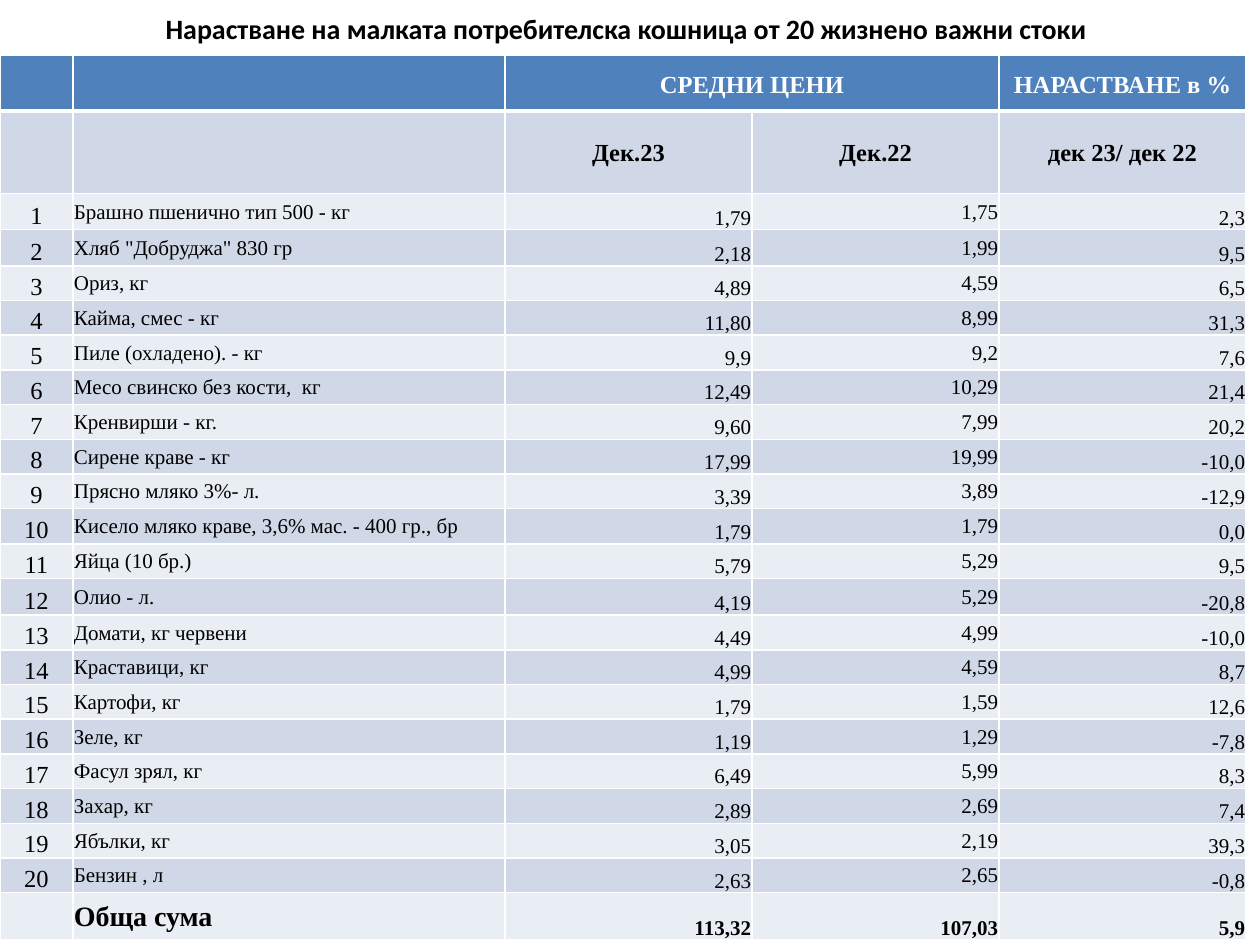
from lxml.etree import SubElement
from pptx import Presentation
from pptx.dml.color import RGBColor
from pptx.enum.text import MSO_ANCHOR, PP_ALIGN
from pptx.oxml.ns import qn
from pptx.util import Cm, Pt

SERIF = "Times New Roman"
HEADER, BAND_DARK, BAND_LIGHT = "4F81BD", "D0D8E8", "E9EDF4"
LEFT, CENTER, RIGHT = PP_ALIGN.LEFT, PP_ALIGN.CENTER, PP_ALIGN.RIGHT
MIDDLE, BOTTOM = MSO_ANCHOR.MIDDLE, MSO_ANCHOR.BOTTOM

TITLE = "Нарастване на малката потребителска кошница от 20 жизнено важни стоки"
HEADINGS = ["", "", "СРЕДНИ ЦЕНИ", "", "НАРАСТВАНЕ в %"]
PERIODS = ["", "", "Дек.23", "Дек.22", "дек 23/ дек 22"]
GOODS = [
    ("Брашно пшенично тип 500 - кг", "1,79", "1,75", "2,3"),
    ('Хляб "Добруджа" 830 гр', "2,18", "1,99", "9,5"),
    ("Ориз, кг", "4,89", "4,59", "6,5"),
    ("Кайма, смес - кг", "11,80", "8,99", "31,3"),
    ("Пиле (охладено). - кг", "9,9", "9,2", "7,6"),
    ("Месо свинско без кости,  кг", "12,49", "10,29", "21,4"),
    ("Кренвирши - кг.", "9,60", "7,99", "20,2"),
    ("Сирене краве - кг", "17,99", "19,99", "-10,0"),
    ("Прясно мляко 3%- л.", "3,39", "3,89", "-12,9"),
    ("Кисело мляко краве, 3,6% мас. - 400 гр., бр", "1,79", "1,79", "0,0"),
    ("Яйца (10 бр.)", "5,79", "5,29", "9,5"),
    ("Олио - л.", "4,19", "5,29", "-20,8"),
    ("Домати, кг червени", "4,49", "4,99", "-10,0"),
    ("Краставици, кг", "4,99", "4,59", "8,7"),
    ("Картофи, кг", "1,79", "1,59", "12,6"),
    ("Зеле, кг", "1,19", "1,29", "-7,8"),
    ("Фасул зрял, кг", "6,49", "5,99", "8,3"),
    ("Захар, кг", "2,89", "2,69", "7,4"),
    ("Ябълки, кг", "3,05", "2,19", "39,3"),
    ("Бензин , л", "2,63", "2,65", "-0,8"),
]
TOTAL = ["", "Oбща сума", "113,32", "107,03", "5,9"]

COL_WIDTHS = [1.47, 8.71, 4.98, 4.98, 4.98]
HEADING_H, PERIOD_H, GOODS_H, TOTAL_H = 1.12, 1.66, 0.7, 0.96
TALLER_GOODS = {1: 0.73, 2: 0.73, 10: 0.71, 12: 0.74}

# Alignment and anchor of each column in the goods rows
GOODS_FORMAT = [(CENTER, BOTTOM), (LEFT, MIDDLE), (RIGHT, BOTTOM),
                (RIGHT, MIDDLE), (RIGHT, BOTTOM)]


def rgb(value):
    return RGBColor.from_string(value)


def write(tf, text, font=SERIF, size=12, bold=False, color="000000",
          align=LEFT, spacing=None):
    p = tf.paragraphs[0]
    p.alignment = align
    if spacing:
        p.line_spacing = spacing
    r = p.add_run()
    r.text = text
    r.font.name, r.font.size, r.font.bold = font, Pt(size), bold
    r.font.color.rgb = rgb(color)


def set_borders(cell, top=1, bottom=1, color="FFFFFF"):
    tc_pr = cell._tc.get_or_add_tcPr()
    for i, (side, width) in enumerate(
            [("L", 1), ("R", 1), ("T", top), ("B", bottom)]):
        ln = SubElement(tc_pr, qn(f"a:ln{side}"), w=str(Pt(width)))
        fill = SubElement(ln, qn("a:solidFill"))
        SubElement(fill, qn("a:srgbClr"), val=color)
        tc_pr.insert(i, ln)


def format_cell(cell, text, fill, anchor=MIDDLE, wide=False,
                top=1, bottom=1, **text_format):
    cell.fill.solid()
    cell.fill.fore_color.rgb = rgb(fill)
    cell.vertical_anchor = anchor
    cell.margin_left = cell.margin_right = Cm(0.13 if wide else 0.02)
    cell.margin_top = Cm(0 if wide else 0.02)
    cell.margin_bottom = 0
    set_borders(cell, top, bottom)
    if text:
        write(cell.text_frame, text, **text_format)


def add_title(slide, x, y, w, h):
    s = slide.shapes.add_textbox(Cm(x), Cm(y), Cm(w), Cm(h))
    tf = s.text_frame
    tf.word_wrap = True
    tf.vertical_anchor = MIDDLE
    write(tf, TITLE, font="Calibri", size=16, bold=True, align=CENTER)


def add_price_table(slide, x, y):
    heights = [HEADING_H, PERIOD_H]
    heights += [TALLER_GOODS.get(n, GOODS_H) for n in range(1, len(GOODS) + 1)]
    heights.append(TOTAL_H)
    table = slide.shapes.add_table(
        len(heights), len(COL_WIDTHS), Cm(x), Cm(y),
        Cm(sum(COL_WIDTHS)), Cm(sum(heights))).table
    for column, width in zip(table.columns, COL_WIDTHS):
        column.width = Cm(width)
    for row, height in zip(table.rows, heights):
        row.height = Cm(height)

    # Two heading rows
    for col, text in enumerate(HEADINGS):
        format_cell(table.cell(0, col), text, HEADER, wide=True, bottom=3,
                    size=14, bold=True, color="FFFFFF", align=CENTER,
                    spacing=1.15)
    table.cell(0, 2).merge(table.cell(0, 3))
    for col, text in enumerate(PERIODS):
        format_cell(table.cell(1, col), text, BAND_DARK, top=3,
                    size=14, bold=True, align=CENTER)

    # Numbered goods in alternating bands
    for n, goods in enumerate(GOODS, 1):
        band = BAND_LIGHT if n % 2 else BAND_DARK
        for col, text in enumerate([str(n), *goods]):
            align, anchor = GOODS_FORMAT[col]
            number = col == 0
            format_cell(table.cell(n + 1, col), text, band, anchor=anchor,
                        wide=number, size=14 if number else 12, align=align,
                        spacing=1.15 if number else None)

    # Total row
    for col, text in enumerate(TOTAL):
        label = col == 1
        format_cell(table.cell(len(heights) - 1, col), text, BAND_LIGHT,
                    anchor=MIDDLE if label else BOTTOM, bold=True,
                    size=16 if label else 12, align=LEFT if label else RIGHT)


def main():
    prs = Presentation()
    prs.slide_width, prs.slide_height = Cm(25.4), Cm(19.05)
    slide = prs.slides.add_slide(prs.slide_layouts[6])
    add_title(slide, 0.89, 0.03, 23.47, 1.09)
    add_price_table(slide, 0, 1.12)
    prs.save("out.pptx")


if __name__ == "__main__":
    main()
